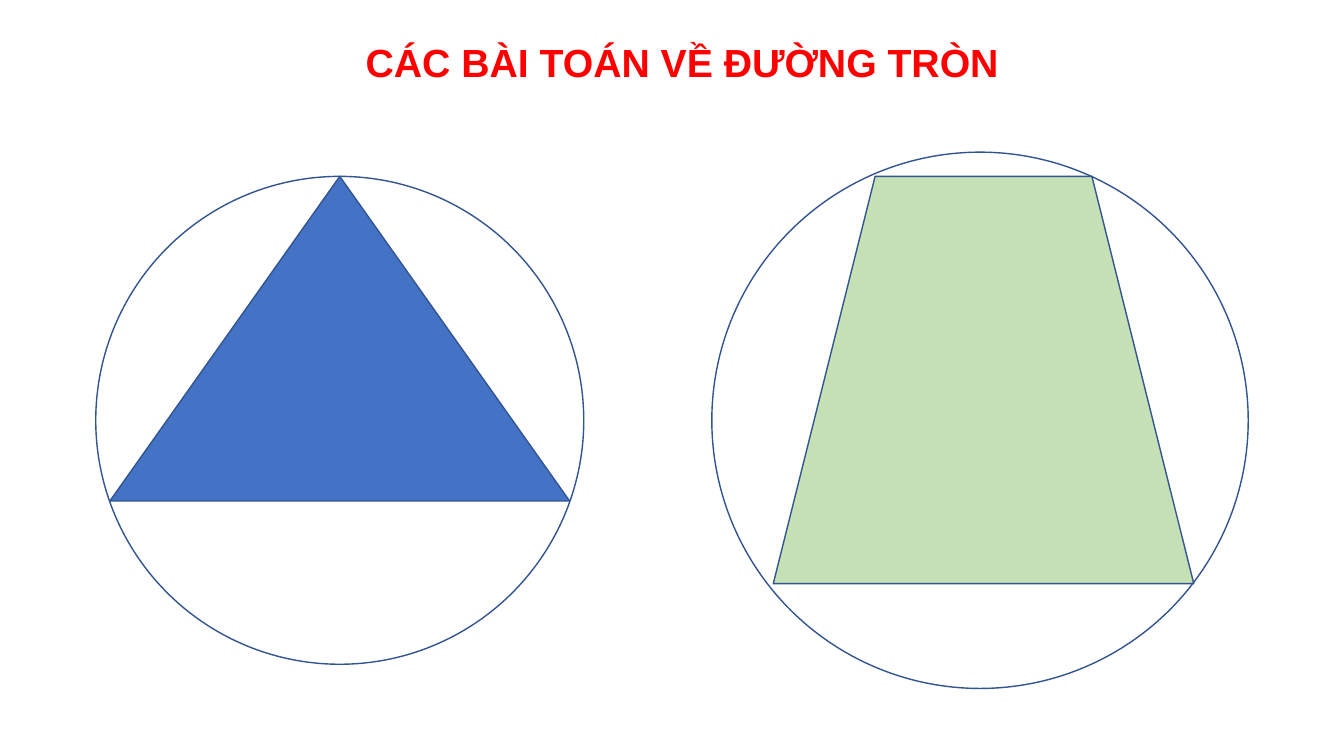
"""Build a slide of two polygons, each drawn inside its circle."""
from dataclasses import dataclass

from pptx import Presentation
from pptx.dml.color import RGBColor
from pptx.enum.shapes import MSO_SHAPE
from pptx.enum.text import MSO_ANCHOR, PP_ALIGN
from pptx.shapes.group import GroupShape
from pptx.slide import Slide
from pptx.util import Pt

PX = 9144
OVAL = MSO_SHAPE.OVAL
TRIANGLE = MSO_SHAPE.ISOSCELES_TRIANGLE
TRAPEZOID = MSO_SHAPE.TRAPEZOID
CENTER = PP_ALIGN.CENTER
MIDDLE = MSO_ANCHOR.MIDDLE


@dataclass(frozen=True)
class Theme:
    font: str = "Arial"
    size: int = 28
    title: str = "FF0000"
    line: str = "325491"
    width: int = 1
    blue: str = "4472C4"
    green: str = "C5E0B4"


@dataclass(frozen=True)
class Box:
    left: int
    top: int
    width: int
    height: int

    def emu(self) -> tuple[int, int, int, int]:
        return self.left * PX, self.top * PX, self.width * PX, self.height * PX


@dataclass(frozen=True)
class Figure:
    kind: MSO_SHAPE
    fill: str
    box: Box
    ring: Box


THEME = Theme()
FIGURES = (
    Figure(TRIANGLE, THEME.blue, Box(109, 175, 456, 322), Box(95, 175, 484, 484)),
    Figure(TRAPEZOID, THEME.green, Box(767, 175, 417, 404), Box(706, 151, 532, 532)),
)


def add_title(slide: Slide, text: str, box: Box) -> None:
    title = slide.shapes.title
    title.left, title.top, title.width, title.height = box.emu()
    frame = title.text_frame
    frame.text = text
    frame.word_wrap = True
    frame.vertical_anchor = MIDDLE
    line = frame.paragraphs[0]
    line.alignment = CENTER
    line.font.name = THEME.font
    line.font.size = Pt(THEME.size)
    line.font.bold = True
    line.font.color.rgb = RGBColor.from_string(THEME.title)


def add_shape(group: GroupShape, kind: MSO_SHAPE, box: Box, fill: str | None = None) -> None:
    shape = group.shapes.add_shape(kind, *box.emu())
    shape.shadow.inherit = False
    shape.line.color.rgb = RGBColor.from_string(THEME.line)
    shape.line.width = Pt(THEME.width)
    if fill:
        shape.fill.solid()
        shape.fill.fore_color.rgb = RGBColor.from_string(fill)
    else:
        shape.fill.background()


def add_figure(slide: Slide, figure: Figure) -> None:
    group = slide.shapes.add_group_shape()
    add_shape(group, figure.kind, figure.box, figure.fill)
    add_shape(group, OVAL, figure.ring)


def main() -> None:
    deck = Presentation()
    deck.slide_width, deck.slide_height = 1333 * PX, 750 * PX
    slide = deck.slides.add_slide(deck.slide_layouts[5])
    add_title(slide, "CÁC BÀI TOÁN VỀ ĐƯỜNG TRÒN", Box(114, 33, 1125, 57))
    for figure in FIGURES:
        add_figure(slide, figure)
    deck.save("out.pptx")


if __name__ == "__main__":
    main()
